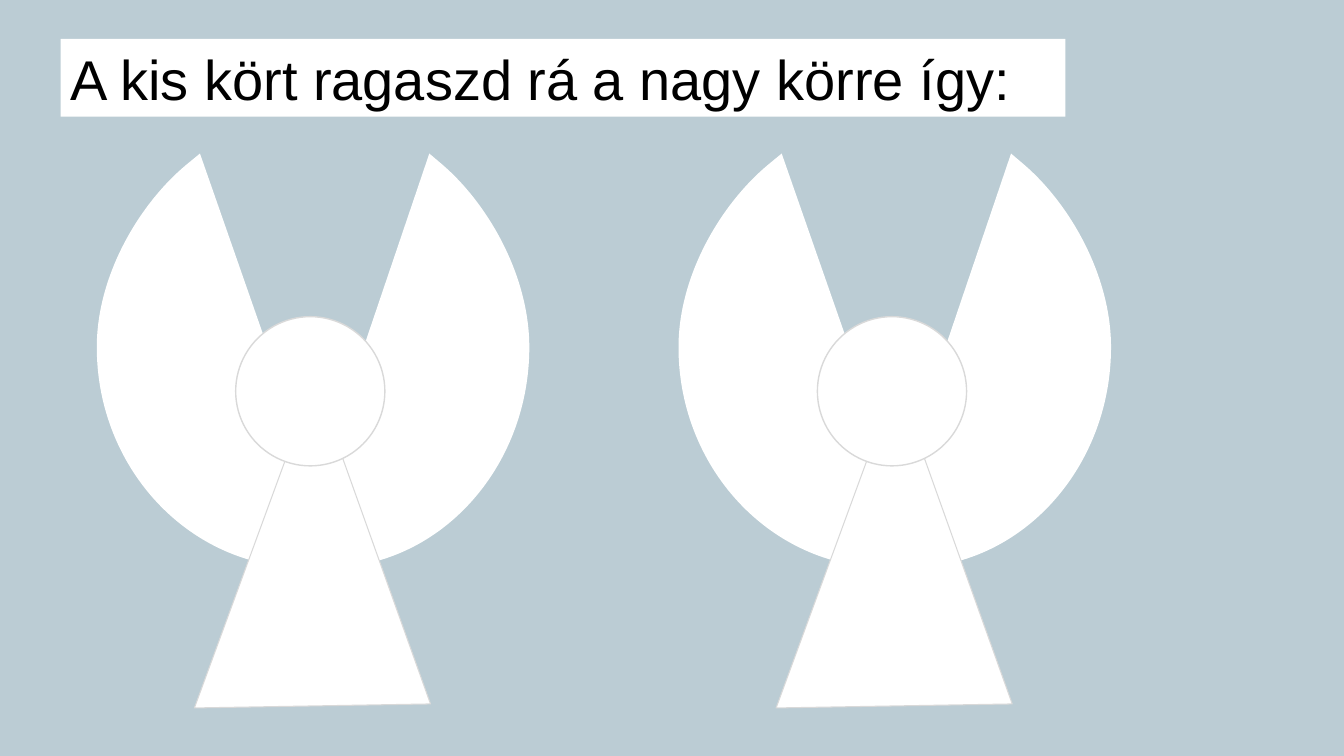
import lxml.etree
import pptx
import pptx.dml.color
import pptx.enum.shapes
import pptx.enum.text
import pptx.oxml.ns
import pptx.util

Cm = pptx.util.Cm
Pt = pptx.util.Pt
qn = pptx.oxml.ns.qn

WHITE = "FFFFFF"
OUTLINE = "D9D9D9"
LEFT_WING = ((2.6, 0), (2.26, 0.28), (1.07, 1.27), (0, 3.07), (0, 4.88),
             (0, 7.75), (2.06, 10.13), (4.72, 10.41), (5.05, 10.44), (5.03, 6.96))
RIGHT_WING = ((8.38, 0), (8.71, 0.28), (9.86, 1.27), (10.9, 3.07), (10.9, 4.88),
              (10.9, 7.75), (8.89, 10.13), (6.32, 10.41), (6.02, 10.44), (6.02, 6.96))
GOWN = ((5.05, 6.91), (5.94, 6.96), (8.41, 13.87), (2.46, 13.97))


def color(value):
    """Return the colour for a hex string."""
    return pptx.dml.color.RGBColor.from_string(value)


def paint(shape, line_width=None):
    """Fill a shape white and outline it when a line width is given."""
    shape.shadow.inherit = False
    shape.fill.solid()
    shape.fill.fore_color.rgb = color(WHITE)
    if line_width is None:
        shape.line.fill.background()
    else:
        shape.line.color.rgb = color(OUTLINE)
        shape.line.width = Pt(line_width)


def add_outline(slide, left, top, points, line_width=None):
    """Draw a closed outline from points relative to a corner."""
    corners = [(Cm(left + x), Cm(top + y)) for x, y in points]
    builder = slide.shapes.build_freeform(*corners[0])
    builder.add_line_segments(corners[1:], close=True)
    shape = builder.convert_to_shape()
    paint(shape, line_width)
    return shape


def add_wing(slide, left, top, points):
    """Draw a wing whose outer edge is two cubic curves."""
    wing = add_outline(slide, left, top, points)
    segments = list(wing.element.iter(qn("a:lnTo")))
    for first in (1, 4):
        curve = lxml.etree.Element(qn("a:cubicBezTo"))
        segments[first].addprevious(curve)
        for segment in segments[first:first + 3]:
            curve.append(segment[0])
            segment.getparent().remove(segment)


def add_angel(slide, left, top):
    """Draw an angel with two wings, a gown and a round head."""
    for points in (LEFT_WING, RIGHT_WING):
        add_wing(slide, left, top, points)
    add_outline(slide, left, top, GOWN, 0.75)
    head = slide.shapes.add_shape(pptx.enum.shapes.MSO_SHAPE.OVAL,
                                  Cm(left + 3.5), Cm(top + 4.11), Cm(3.76), Cm(3.76))
    paint(head, 1)


def add_title(slide, left, top, width, height):
    """Place the instruction on a white bar."""
    title = slide.shapes.title
    title.left, title.top, title.width, title.height = Cm(left), Cm(top), Cm(width), Cm(height)
    title.fill.solid()
    title.fill.fore_color.rgb = color(WHITE)
    frame = title.text_frame
    frame.text = "A kis kört ragaszd rá a nagy körre így:"
    frame.word_wrap = True
    frame.auto_size = pptx.enum.text.MSO_AUTO_SIZE.NONE
    frame.vertical_anchor = pptx.enum.text.MSO_ANCHOR.MIDDLE
    paragraph = frame.paragraphs[0]
    paragraph.alignment = pptx.enum.text.PP_ALIGN.LEFT
    paragraph.line_spacing = 1.0
    paragraph.space_before = Pt(0)
    paragraph.font.name = "Arial"
    paragraph.font.size = Pt(40)
    paragraph.font.color.rgb = color("000000")


def main():
    """Build the slide and save it."""
    presentation = pptx.Presentation()
    presentation.slide_width, presentation.slide_height = Cm(33.87), Cm(19.05)
    slide = presentation.slides.add_slide(presentation.slide_layouts[5])
    slide.background.fill.solid()
    slide.background.fill.fore_color.rgb = color("BBCCD4")
    add_title(slide, 1.53, 0.98, 25.32, 1.96)
    for left in (2.44, 17.1):
        add_angel(slide, left, 3.87)
    presentation.save("out.pptx")


if __name__ == "__main__":
    main()
